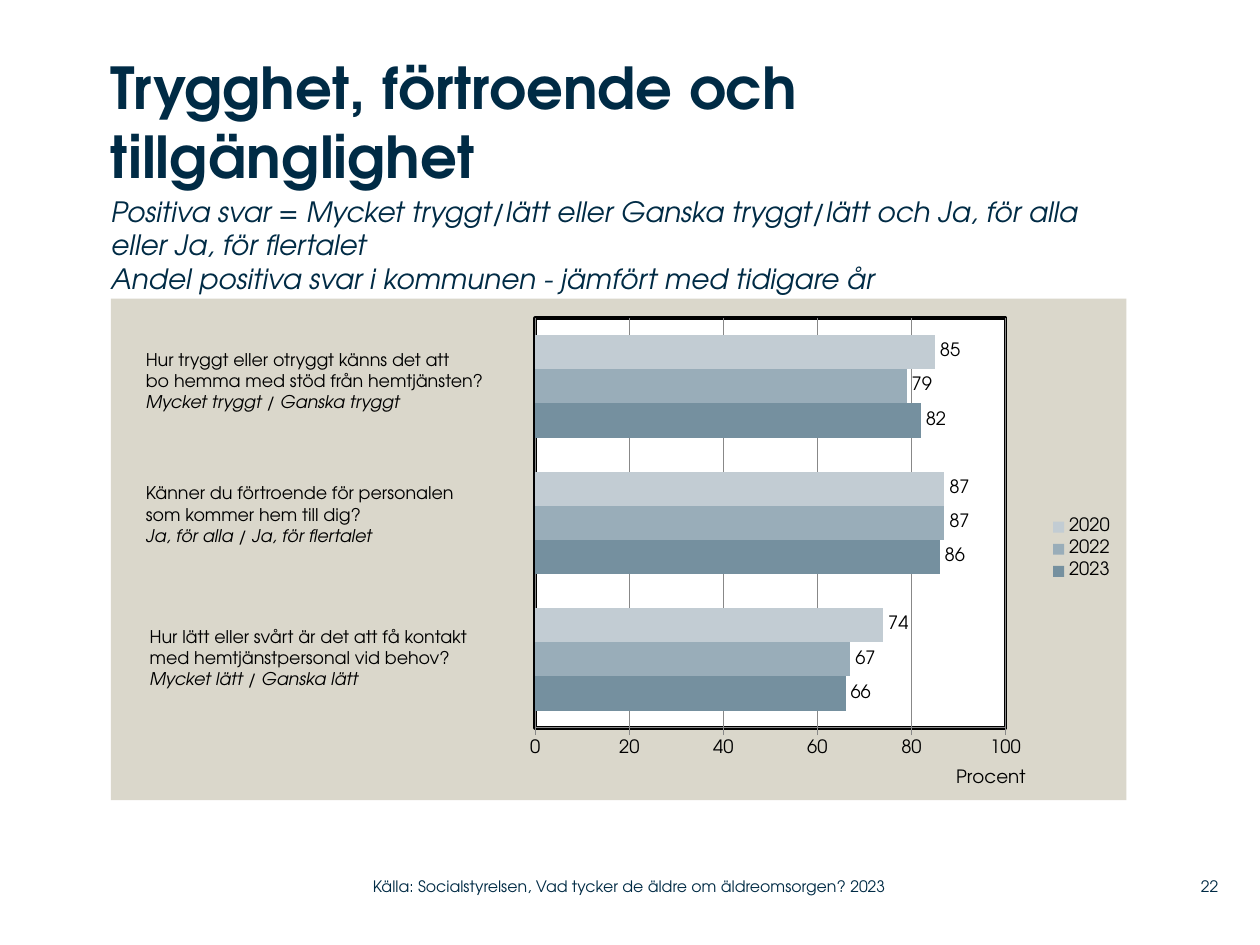
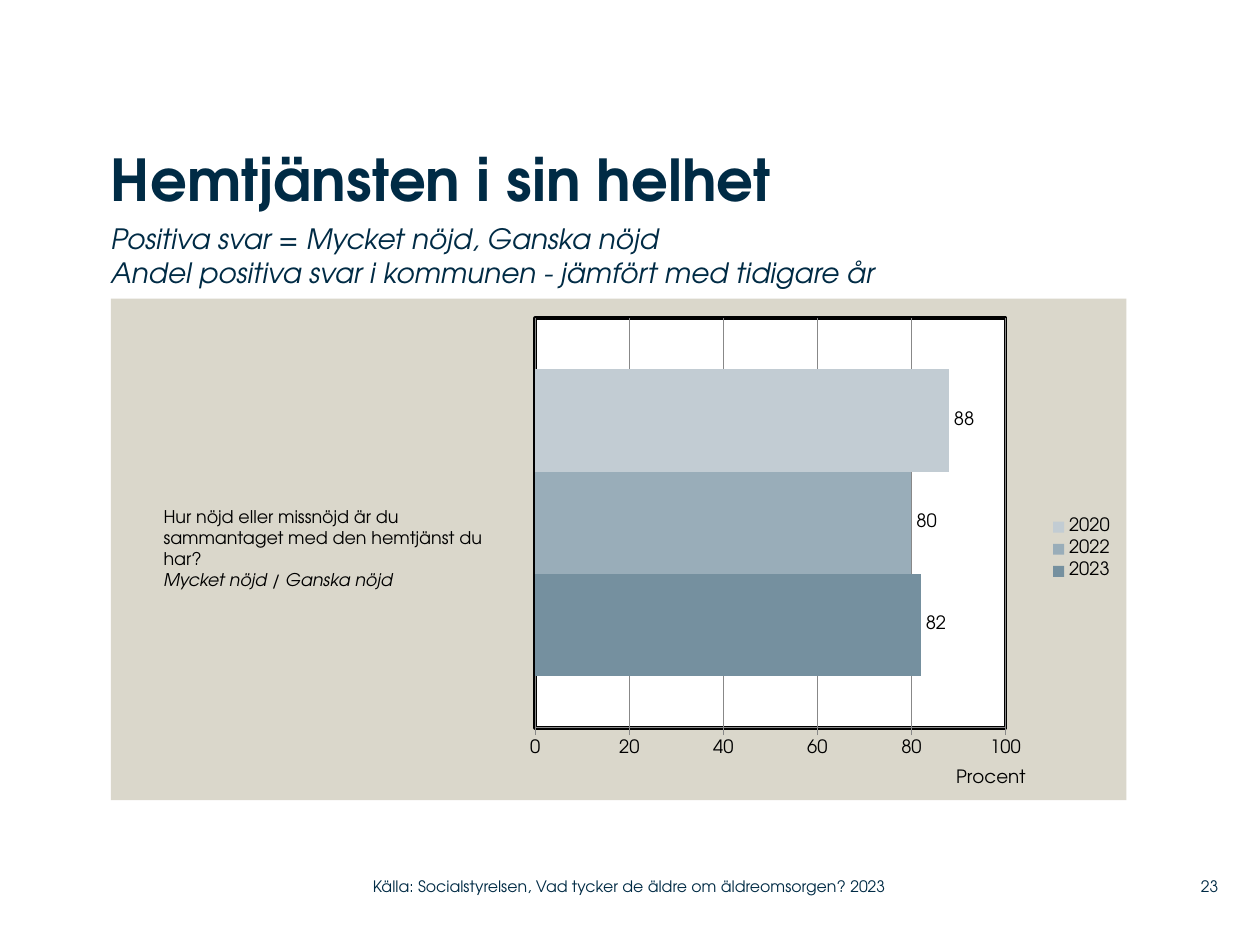
"""Builds two survey slides with bar charts that compare years."""
from pptx import Presentation
from pptx import util as u
from pptx.chart.data import CategoryChartData
from pptx.dml.color import RGBColor
from pptx.enum import chart as charts, text
from pptx.oxml import parse_xml
from pptx.oxml.ns import nsdecls, qn

FONT = "TeX Gyre Adventor"
COLORS = {"navy": "002B45", "black": "000000", "white": "FFFFFF", "sand": "DAD7CB",
          "grid": "888888", "2023": "75909F", "2022": "99ADB9", "2020": "C2CCD3"}
SOURCE = "Källa: Socialstyrelsen, Vad tycker de äldre om äldreomsorgen? 2023"
COMPARISON = "Andel positiva svar i kommunen - jämfört med tidigare år"
SLIDES = [
    {"number": 22,
     "title": ("Trygghet, förtroende och tillgänglighet", 0.41, 1.13),
     "subtitle": ("Positiva svar = Mycket tryggt/lätt eller Ganska tryggt/lätt och "
                  "Ja, för alla eller Ja, för flertalet", 1.54, 0.81),
     "values": {"2023": (66, 86, 82), "2022": (67, 87, 79), "2020": (74, 87, 85)},
     "questions": [
         (("Hur lätt eller svårt är det att få kontakt", "med hemtjänstpersonal vid behov?",
           "Mycket lätt / Ganska lätt"), (1.09, 4.92, 3, 0.61)),
         (("Känner du förtroende för personalen", "som kommer hem till dig?",
           "Ja, för alla / Ja, för flertalet"), (1.06, 3.78, 3, 0.61)),
         (("Hur tryggt eller otryggt känns det att", "bo hemma med stöd från hemtjänsten?",
           "Mycket tryggt / Ganska tryggt"), (1.06, 2.72, 3, 0.61))]},
    {"number": 23,
     "title": ("Hemtjänsten i sin helhet", 1.14, 0.58),
     "subtitle": ("Positiva svar = Mycket nöjd, Ganska nöjd", 1.76, 0.58),
     "values": {"2023": (82,), "2022": (80,), "2020": (88,)},
     "questions": [
         (("Hur nöjd eller missnöjd är du sammantaget med den hemtjänst du har?",
           "Mycket nöjd / Ganska nöjd"), (1.2, 3.97, 2.97, 0.77))]},
]

LEFT, CONTENT_WIDTH, TITLE_WIDTH = 0.88, 8.06, 8.36
CHART_AREA = (LEFT, 2.37, CONTENT_WIDTH, 3.98)
PLOT_SHARE = {"x": 0.418, "y": 0.039, "w": 0.463, "h": 0.817}
AXIS_TITLE_SHARE = {"x": 0.829, "y": 0.93}
FOOTER_TOP, FOOTER_HEIGHT = 6.89, 0.29


def color(name):
    return RGBColor.from_string(COLORS[name])


def style_font(font, size, name="black", bold=False, italic=False):
    font.name, font.size, font.bold, font.italic = FONT, u.Pt(size), bold, italic
    font.color.rgb = color(name)


def write(box, lines, size, name="black", margins=False, anchor=text.MSO_ANCHOR.TOP, **style):
    frame = box.text_frame
    frame.word_wrap = True
    frame.auto_size = text.MSO_AUTO_SIZE.NONE
    frame.vertical_anchor = anchor
    if not margins:
        frame.margin_left = frame.margin_right = frame.margin_top = frame.margin_bottom = 0
    para = frame.paragraphs[0]
    para.text = "\v".join(lines)
    para.alignment = text.PP_ALIGN.LEFT
    for span in para.runs:
        style_font(span.font, size, name, **style)
    return para


def add_text(slide, area, lines, size, name="black", **options):
    box = slide.shapes.add_textbox(*map(u.Inches, area))
    return write(box, lines, size, name, **options)


def layout_xml(shares, inner=False):
    target = '<c:layoutTarget val="inner"/>' if inner else ""
    modes = "".join(f'<c:{key}Mode val="edge"/>' for key in shares if key in "xy")
    sizes = "".join(f'<c:{key} val="{share}"/>' for key, share in shares.items())
    return parse_xml(f'<c:layout {nsdecls("c")}><c:manualLayout>{target}{modes}{sizes}'
                     '</c:manualLayout></c:layout>')


def fill_xml(fill, line):
    return parse_xml(f'<c:spPr {nsdecls("c", "a")}><a:solidFill><a:srgbClr val="{COLORS[fill]}"/>'
                     f'</a:solidFill>{line}</c:spPr>')


def place(parent, layout, index):
    for old in parent.findall(qn("c:layout")):
        parent.remove(old)
    parent.insert(index, layout)


def style_value_axis(axis):
    axis.minimum_scale, axis.maximum_scale, axis.major_unit = 0, 100, 20
    axis.major_tick_mark = charts.XL_TICK_MARK.OUTSIDE
    axis.has_major_gridlines = True
    for line in (axis.format.line, axis.major_gridlines.format.line):
        line.color.rgb = color("grid")
        line.width = u.Pt(0.75)
    style_font(axis.tick_labels.font, 10.5)
    para = axis.axis_title.text_frame.paragraphs[0]
    para.text = "Procent"
    style_font(para.runs[0].font, 10.5)
    place(axis.axis_title._element, layout_xml(AXIS_TITLE_SHARE), 1)


def add_year_chart(slide, values):
    data = CategoryChartData()
    data.categories = [str(place + 1) for place in range(len(values["2023"]))]
    for year, shares in values.items():
        data.add_series(year, shares)
    chart = slide.shapes.add_chart(charts.XL_CHART_TYPE.BAR_CLUSTERED,
                                   *map(u.Inches, CHART_AREA), data).chart
    style_font(chart.font, 10)
    chart.has_title = False
    chart.category_axis.visible = False
    style_value_axis(chart.value_axis)
    chart.has_legend = True
    chart.legend.position = charts.XL_LEGEND_POSITION.RIGHT
    chart.legend.include_in_layout = False
    style_font(chart.legend.font, 10.5)

    plot = chart.plots[0]
    plot.gap_width, plot.overlap, plot.vary_by_categories = 100, 0, False
    for series in plot.series:
        series.format.fill.solid()
        series.format.fill.fore_color.rgb = color(series.name)
        labels = series.data_labels
        labels.show_value = True
        labels.position = charts.XL_LABEL_POSITION.OUTSIDE_END
        style_font(labels.font, 10.5)

    body = chart._chartSpace.find(qn("c:chart"))
    body.addnext(fill_xml("sand", "<a:ln><a:noFill/></a:ln>"))
    area = body.find(qn("c:plotArea"))
    place(area, layout_xml(PLOT_SHARE, inner=True), 0)
    border = (f'<a:ln w="{u.Pt(2.25)}"><a:solidFill><a:srgbClr val="{COLORS["black"]}"/>'
              '</a:solidFill></a:ln>')
    area.append(fill_xml("white", border))


def add_footer(slide, number):
    middle = text.MSO_ANCHOR.MIDDLE
    para = add_text(slide, (9.2, FOOTER_TOP, 0.47, FOOTER_HEIGHT), [str(number)], 9, "navy",
                    anchor=middle)
    para.alignment = text.PP_ALIGN.RIGHT
    add_text(slide, (2.96, FOOTER_TOP, 4.43, FOOTER_HEIGHT), [SOURCE], 9, "navy", anchor=middle)


def add_survey_slide(deck, content):
    slide = deck.slides.add_slide(deck.slide_layouts[5])
    heading, top, height = content["title"]
    title = slide.shapes.title
    title.left, title.top, title.width, title.height = map(
        u.Inches, (LEFT, top, TITLE_WIDTH, height))
    write(title, [heading], 33, "navy", bold=True)
    definition, top, height = content["subtitle"]
    para = add_text(slide, (LEFT, top, CONTENT_WIDTH, height), [definition, COMPARISON],
                    16, "navy", italic=True)
    para.space_after = u.Pt(8)
    add_year_chart(slide, content["values"])
    for lines, area in content["questions"]:
        para = add_text(slide, area, lines, 10, margins=True)
        para.runs[-1].font.italic = True
    add_footer(slide, content["number"])


def main():
    deck = Presentation()
    deck.slide_width, deck.slide_height = u.Inches(10), u.Inches(7.5)
    for content in SLIDES:
        add_survey_slide(deck, content)
    deck.save("out.pptx")


if __name__ == "__main__":
    main()
